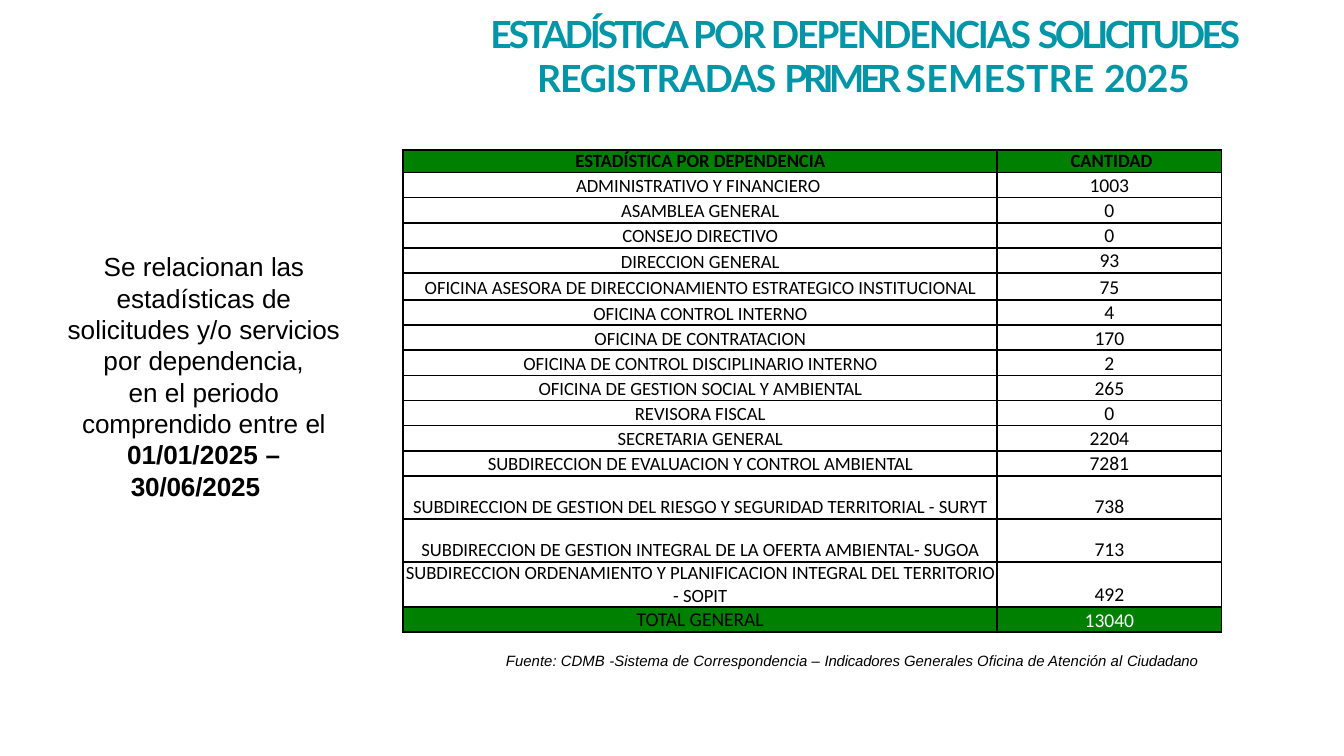
import dataclasses

import pptx
import pptx.dml.color
import pptx.enum.text
import pptx.oxml
import pptx.oxml.ns
import pptx.util

Inches = pptx.util.Inches
Pt = pptx.util.Pt
Align = pptx.enum.text.PP_ALIGN
Anchor = pptx.enum.text.MSO_ANCHOR


@dataclasses.dataclass(frozen=True)
class Theme:
    teal: str = "0096A7"
    green: str = "008000"
    black: str = "000000"
    white: str = "FFFFFF"
    title_font: str = "Lato"
    body_font: str = "Arial"
    table_font: str = "Calibri"
    title_size: float = 20
    body_size: float = 14
    label_size: float = 10
    value_size: float = 10.5
    source_size: float = 8
    border: float = 1


THEME = Theme()

# The 16:9 slide is a grid of 100 columns, with steps of a tenth of an inch.
COLUMNS, STEP = 100, 0.1

# Runs are (text, letter spacing in points).
TITLE = [
    ("ESTADÍSTICA ", -1.8), ("POR DEPENDENCIAS ", -1.2), ("SOLICITUDES ", -1.9),
    ("REGISTRADAS ", -0.6), ("PRIMER ", -2.4), ("SEMESTRE ", 0.1), ("2025", -0.2),
]
SOURCE = [
    ("Fuente: CDMB ", 0), ("-", -0.1), ("Sistema de Correspondencia – ", 0),
    ("Indicadores ", -0.1), ("Generales Oficina de Atención al ", 0), ("Ciudadano", -0.1),
]
SUMMARY = [
    ("Se relacionan ", 0), ("las ", -0.2), ("estadísticas ", 0), ("de ", -0.2),
    ("solicitudes y/o ", 0), ("servicios ", -0.1), ("por ", 0), ("dependencia,", -0.1),
]
PERIOD = [("en el ", 0), ("periodo comprendido ", -0.1), ("entre ", 0), ("el ", -0.3)]
PERIOD_START = [("01/01/2025 ", 0), ("–", -0.5)]
PERIOD_END = [("30/06/2025", -0.1)]

HEADER = ("ESTADÍSTICA POR DEPENDENCIA", " CANTIDAD")
REQUESTS = [
    ("ADMINISTRATIVO Y FINANCIERO ", 1003),
    ("ASAMBLEA GENERAL", 0),
    ("CONSEJO DIRECTIVO", 0),
    ("DIRECCION GENERAL", 93),
    ("OFICINA ASESORA DE DIRECCIONAMIENTO ESTRATEGICO INSTITUCIONAL", 75),
    ("OFICINA CONTROL INTERNO", 4),
    ("OFICINA DE CONTRATACION", 170),
    ("OFICINA DE CONTROL DISCIPLINARIO INTERNO", 2),
    ("OFICINA DE GESTION SOCIAL Y AMBIENTAL", 265),
    ("REVISORA FISCAL", 0),
    ("SECRETARIA GENERAL", 2204),
    ("SUBDIRECCION DE EVALUACION Y CONTROL AMBIENTAL", 7281),
    ("SUBDIRECCION DE GESTION DEL RIESGO Y SEGURIDAD TERRITORIAL - SURYT", 738),
    ("SUBDIRECCION DE GESTION INTEGRAL DE LA OFERTA AMBIENTAL- SUGOA", 713),
    ("SUBDIRECCION ORDENAMIENTO Y PLANIFICACION INTEGRAL DEL TERRITORIO - SOPIT", 492),
]
TOTAL = ("TOTAL GENERAL", sum(count for _, count in REQUESTS))
USUAL_ROW = 1.8
SPECIAL_ROWS = {0: 1.6, 5: 2, 13: 3.2, 14: 3.2, 15: 2.3}


def grid(*steps):
    return [Inches(step * STEP) for step in steps]


def style(font, name, size, color, bold=False, italic=False):
    font.name, font.size, font.bold, font.italic = name, Pt(size), bold, italic
    font.color.rgb = pptx.dml.color.RGBColor.from_string(color)


def add_spans(para, spans, bold=None):
    for text, spacing in spans:
        span = para.add_run()
        span.text = text
        span.font.bold = bold
        if spacing:
            span._r.get_or_add_rPr().set("spc", str(round(spacing * 100)))


def prepare_frame(frame, top_inset):
    frame.word_wrap = True
    frame.auto_size = pptx.enum.text.MSO_AUTO_SIZE.NONE
    frame.vertical_anchor = Anchor.TOP
    frame.margin_left = frame.margin_right = frame.margin_bottom = 0
    frame.margin_top = Inches(top_inset)


def add_title(page):
    box = page.shapes.title
    box.left, box.top, box.width, box.height = grid(34.3, 0.9, 59.9, 10.3)
    prepare_frame(box.text_frame, 0.01)
    para = box.text_frame.paragraphs[0]
    para.alignment = Align.CENTER
    para.line_spacing = 0.98
    para.space_before = Pt(0)
    style(para.font, THEME.title_font, THEME.title_size, THEME.teal, bold=True)
    add_spans(para, TITLE)


def add_text(page, area, paragraphs, size, alignment, italic=False):
    """Each paragraph is a list of (spans, bold) groups."""
    frame = page.shapes.add_textbox(*grid(*area)).text_frame
    prepare_frame(frame, 0.02)
    for index, groups in enumerate(paragraphs):
        para = frame.add_paragraph() if index else frame.paragraphs[0]
        para.alignment = alignment
        style(para.font, THEME.body_font, size, THEME.black, italic=italic)
        for spans, bold in groups:
            add_spans(para, spans, bold)
    return frame


def add_borders(cell):
    properties = cell._tc.get_or_add_tcPr()
    for index, side in enumerate(("lnL", "lnR", "lnT", "lnB")):
        line = pptx.oxml.parse_xml(
            f'<a:{side} {pptx.oxml.ns.nsdecls("a")} w="{Pt(THEME.border)}">'
            f'<a:solidFill><a:srgbClr val="{THEME.black}"/></a:solidFill></a:{side}>'
        )
        properties.insert(index, line)


def fill_cell(cell, text, size, color, anchor, bold=False, fill=None, inset=0):
    cell.margin_left = cell.margin_right = cell.margin_top = Inches(inset)
    cell.margin_bottom = 0
    cell.vertical_anchor = anchor
    if fill:
        cell.fill.solid()
        cell.fill.fore_color.rgb = pptx.dml.color.RGBColor.from_string(fill)
    else:
        cell.fill.background()
    add_borders(cell)
    para = cell.text_frame.paragraphs[0]
    para.alignment = Align.CENTER
    style(para.font, THEME.table_font, size, color, bold)
    para.add_run().text = str(text)


def add_requests_table(page):
    records = [HEADER, *REQUESTS, TOTAL]
    last = len(records) - 1
    table = page.shapes.add_table(len(records), 2, *grid(30, 11.15, 60.9, 33.9)).table
    for column, width in zip(table.columns, grid(44.2, 16.7)):
        column.width = width
    for index, (label, value) in enumerate(records):
        table.rows[index].height = grid(SPECIAL_ROWS.get(index, USUAL_ROW))[0]
        is_header, is_total = index == 0, index == last
        fill = THEME.green if is_header or is_total else None
        label_anchor = Anchor.MIDDLE if fill else Anchor.BOTTOM
        label_size = THEME.value_size if is_total else THEME.label_size
        fill_cell(table.cell(index, 0), label, label_size, THEME.black,
                  label_anchor, is_header, fill)
        fill_cell(table.cell(index, 1), value,
                  THEME.label_size if is_header else THEME.value_size,
                  THEME.white if is_total else THEME.black,
                  Anchor.MIDDLE if is_header else Anchor.BOTTOM,
                  is_header, fill, 0 if is_header else 0.01)


def main():
    deck = pptx.Presentation()
    deck.slide_width = grid(COLUMNS)[0]
    deck.slide_height = deck.slide_width * 9 // 16
    page = deck.slides.add_slide(deck.slide_layouts[5])

    # Heading
    add_title(page)

    # Source line under the table
    add_text(page, (37.65, 48.3, 53.3, 1.5), [[(SOURCE, None)]],
             THEME.source_size, Align.LEFT, italic=True)

    # Summary beside the table
    summary = [[(SUMMARY, None)], [(PERIOD, None), (PERIOD_START, True)], [(PERIOD_END, True)]]
    frame = add_text(page, (4.85, 18.45, 20.6, 19), summary, THEME.body_size, Align.CENTER)
    frame.paragraphs[-1]._p.get_or_add_pPr().set("marR", str(Inches(0.12)))

    # Requests by department
    add_requests_table(page)

    deck.save("out.pptx")


if __name__ == "__main__":
    main()
